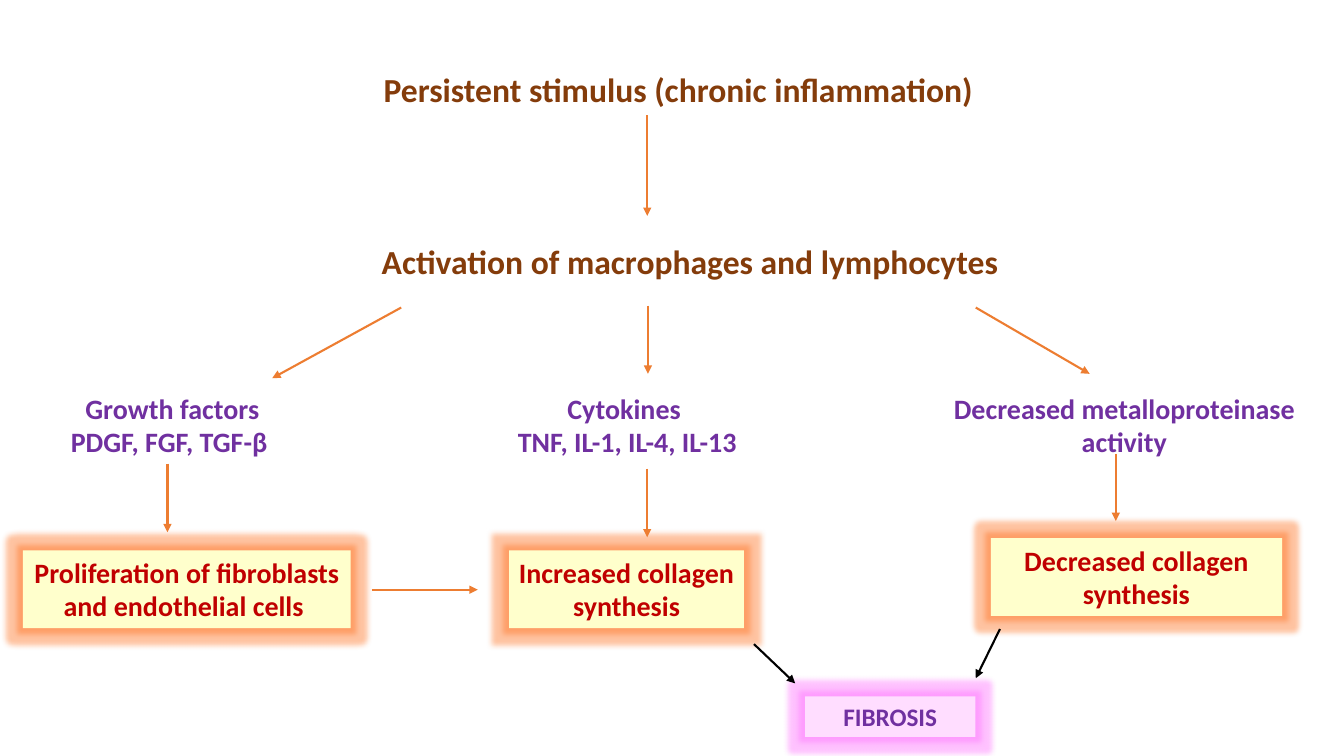
import pptx
import pptx.dml.color
import pptx.enum.shapes
import pptx.enum.text
import pptx.oxml
import pptx.oxml.ns
import pptx.util
from pptx.util import Cm

BROWN, PURPLE, RED = "843C0B", "7030A0", "C00000"
ORANGE, BLACK = "ED7D31", "000000"
YELLOW, PINK = "FFFFCC", "FFDDFF"
ORANGE_GLOW, PINK_GLOW = "FF6A14", "FF66FF"
CENTER = pptx.enum.text.PP_ALIGN.CENTER
LEFT = pptx.enum.text.PP_ALIGN.LEFT

# left, top, width, height in cm
HEADINGS = [
    ("Persistent stimulus (chronic inflammation)", (8.84, 1.6, 16.51, 1.27), CENTER),
    ("Activation of macrophages and lymphocytes", (9.37, 5.94, 16.79, 1.27), LEFT),
]
MEDIATORS = [
    (["Growth factors", "PDGF, FGF, TGF-β "], 1.27, 6.15),
    (["Cytokines ", "TNF, IL-1, IL-4, IL-13"], 12.62, 6.38),
    (["Decreased metalloproteinase activity"], 23.7, 9.27),
]
EFFECTS = [
    ("Proliferation of fibroblasts and endothelial cells ", (0.58, 13.87, 8.26, 1.96)),
    ("Increased collagen synthesis", (12.83, 13.87, 5.92, 1.96)),
    ("Decreased collagen synthesis", (24.97, 13.56, 7.34, 1.96)),
]
# start x, start y, end x, end y in cm
PATHWAY_ARROWS = [
    (16.31, 2.9, 16.31, 5.44),
    (10.11, 7.75, 6.86, 9.53),
    (16.33, 7.7, 16.33, 9.42),
    (24.59, 7.75, 27.46, 9.42),
    (4.22, 11.68, 4.22, 13.41),
    (16.31, 11.81, 16.31, 13.54),
    (28.12, 11.43, 28.12, 13.13),
    (9.37, 14.86, 12.04, 14.86),
]
FIBROSIS_ARROWS = [
    (19, 16.23, 20.04, 17.22),
    (25.2, 15.85, 24.59, 17.09),
]


def rgb(color):
    return pptx.dml.color.RGBColor.from_string(color)


def add_child(parent, xml):
    namespace = pptx.oxml.ns.nsdecls("a")
    parent.append(pptx.oxml.parse_xml(xml.replace("XMLNS", namespace)))


def write_text(sp, lines, size, color, align=CENTER):
    tf = sp.text_frame
    tf.word_wrap = True
    tf.auto_size = pptx.enum.text.MSO_AUTO_SIZE.SHAPE_TO_FIT_TEXT
    tf.vertical_anchor = pptx.enum.text.MSO_ANCHOR.TOP
    for i, line in enumerate(lines):
        p = tf.add_paragraph() if i else tf.paragraphs[0]
        p.alignment = align
        r = p.add_run()
        r.text = line
        r.font.name = "Calibri"
        r.font.size = pptx.util.Pt(size)
        r.font.bold = True
        r.font.color.rgb = rgb(color)


def add_label(s, lines, place, size, color, align=CENTER):
    sp = s.shapes.add_textbox(*map(Cm, place))
    write_text(sp, lines, size, color, align)


def add_glowing_box(s, text, place, size, color, fill, glow):
    sp = s.shapes.add_shape(pptx.enum.shapes.MSO_SHAPE.RECTANGLE, *map(Cm, place))
    sp.fill.solid()
    sp.fill.fore_color.rgb = rgb(fill)
    sp.line.fill.background()
    sp.shadow.inherit = False
    effects = sp._element.spPr.find(pptx.oxml.ns.qn("a:effectLst"))
    add_child(effects, f'<a:glow XMLNS rad="{Cm(0.28)}"><a:srgbClr val="{glow}">'
                       '<a:alpha val="40000"/></a:srgbClr></a:glow>')
    write_text(sp, [text], size, color)


def add_arrow(s, ends, color):
    straight = pptx.enum.shapes.MSO_CONNECTOR.STRAIGHT
    cxn = s.shapes.add_connector(straight, *map(Cm, ends))
    cxn.line.color.rgb = rgb(color)
    cxn.line.width = pptx.util.Pt(1.5)
    add_child(cxn.line._get_or_add_ln(), '<a:tailEnd XMLNS type="triangle"/>')
    add_child(cxn._element.spPr, "<a:effectLst XMLNS/>")


def main():
    prs = pptx.Presentation()
    prs.slide_width, prs.slide_height = Cm(33.87), Cm(19.05)
    s = prs.slides.add_slide(prs.slide_layouts[6])

    for text, place, align in HEADINGS:
        add_label(s, [text], place, 24, BROWN, align)
    for lines, left, width in MEDIATORS:
        add_label(s, lines, (left, 9.73, width, 1.96), 20, PURPLE)
    for text, place in EFFECTS:
        add_glowing_box(s, text, place, 20, RED, YELLOW, ORANGE_GLOW)
    add_glowing_box(s, "FIBROSIS", (20.29, 17.55, 4.29, 1.02), 18, PURPLE, PINK, PINK_GLOW)
    for ends in PATHWAY_ARROWS:
        add_arrow(s, ends, ORANGE)
    for ends in FIBROSIS_ARROWS:
        add_arrow(s, ends, BLACK)

    prs.save("out.pptx")


if __name__ == "__main__":
    main()
